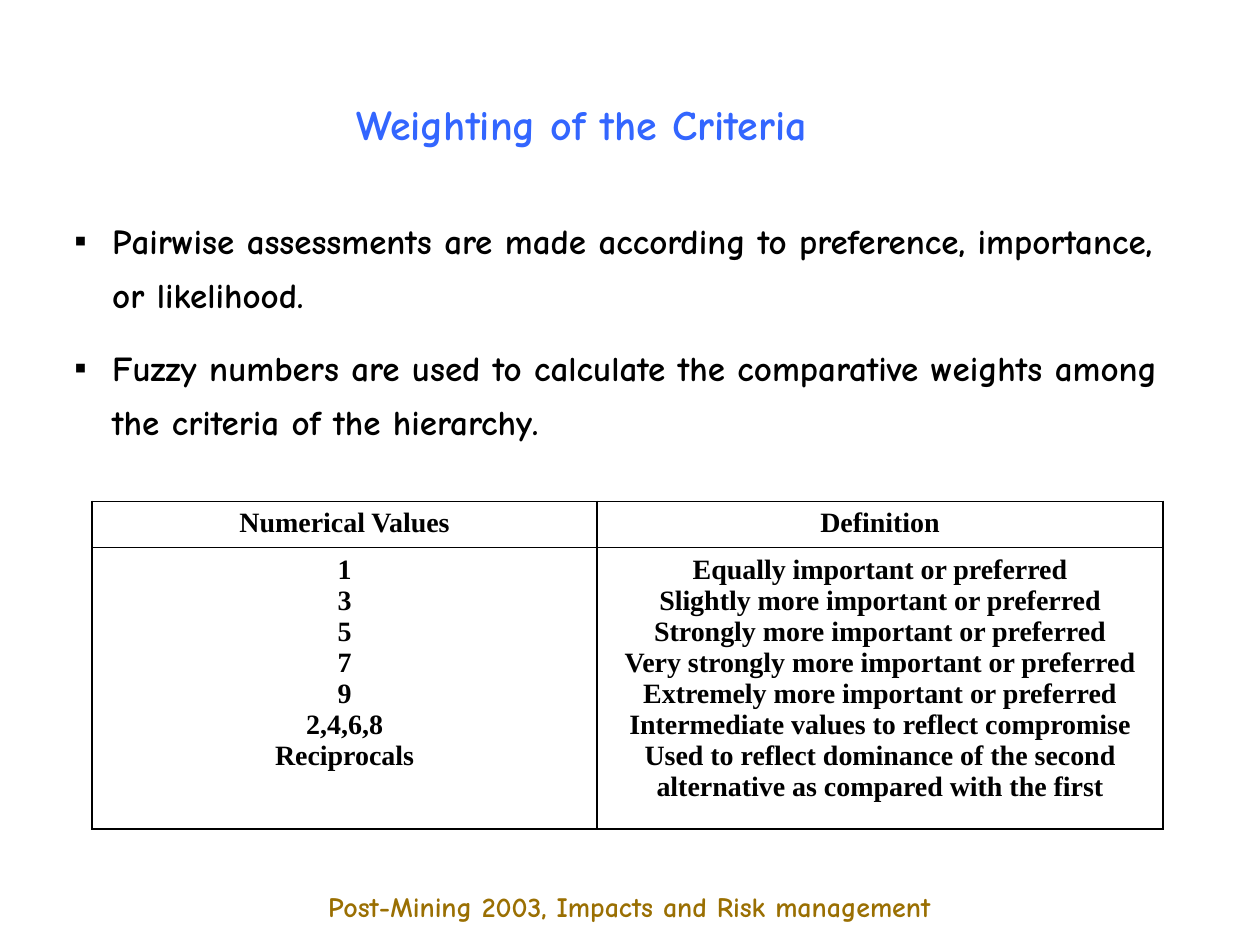
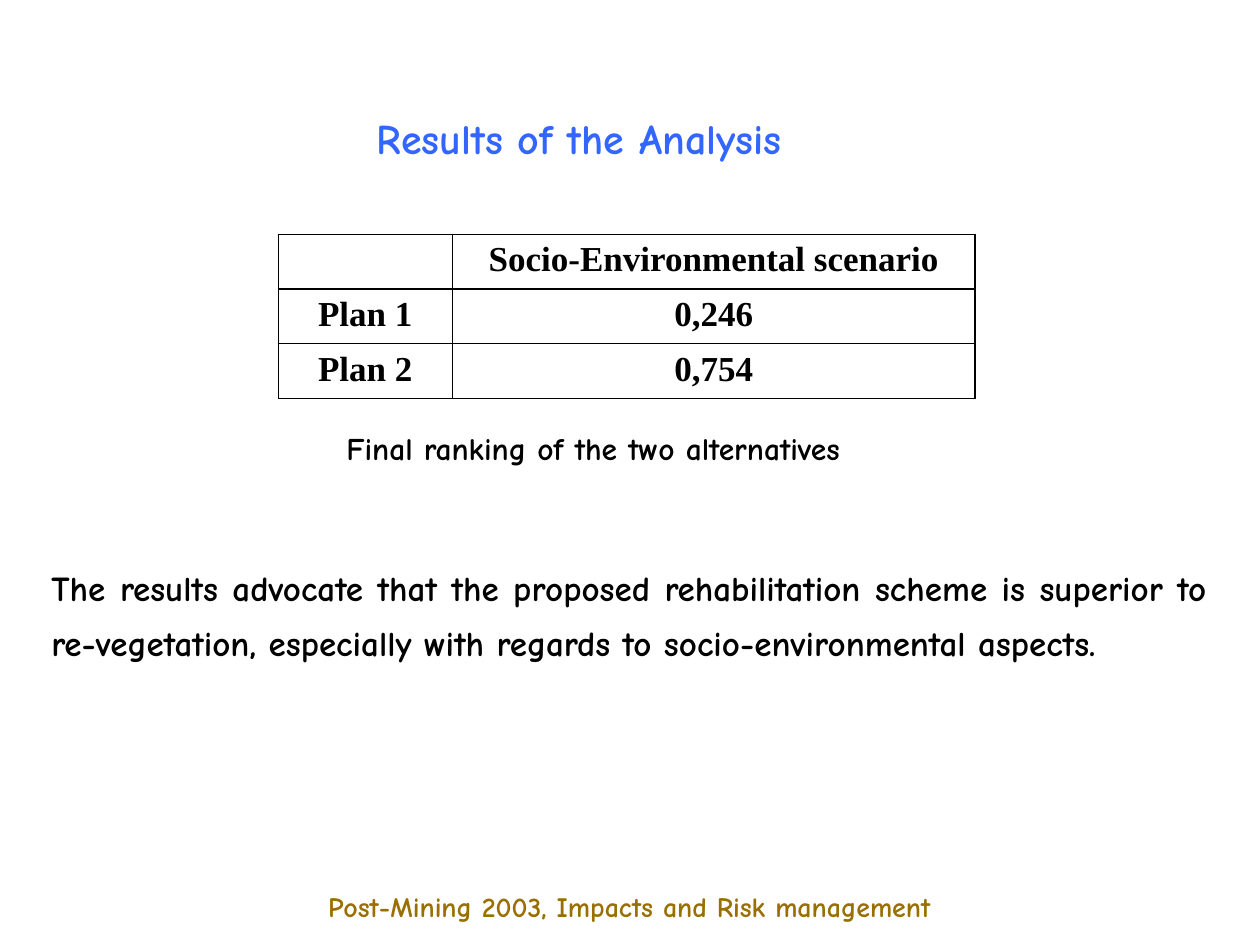
"""Builds two slides on weighting criteria and the results of the analysis."""
import pptx
import pptx.dml.color
import pptx.enum.text
import pptx.oxml
import pptx.oxml.ns
import pptx.util
from pptx.util import Inches

BLUE = pptx.dml.color.RGBColor(0x33, 0x66, 0xFF)
BROWN = pptx.dml.color.RGBColor(0x9A, 0x6F, 0x02)
BLACK = pptx.dml.color.RGBColor(0, 0, 0)
HAND_FONT = "Comic Neue"
TABLE_FONT = "Times New Roman"
LEFT = pptx.enum.text.PP_ALIGN.LEFT
CENTER = pptx.enum.text.PP_ALIGN.CENTER
JUSTIFY = pptx.enum.text.PP_ALIGN.JUSTIFY
TITLE_AND_BODY, TITLE_ONLY = 1, 5
NAMESPACE = pptx.oxml.ns.nsdecls("a")
FOOTER = "Post-Mining 2003, Impacts and Risk management"


def write_text(frame, lines, size, color=BLACK, font=HAND_FONT, align=LEFT,
               line_spacing=1.0, space_before=0, bullet=None):
    frame.word_wrap = True
    for index, line in enumerate(lines):
        paragraph = frame.paragraphs[0] if index == 0 else frame.add_paragraph()
        paragraph.text = line
        if bullet:
            properties = paragraph._p.get_or_add_pPr()
            properties.set("marL", str(Inches(0.3)))
            properties.set("indent", str(-Inches(0.3)))
            properties.append(pptx.oxml.parse_xml(
                f'<a:buChar {NAMESPACE} char="{bullet}"/>'))
        paragraph.alignment = align
        paragraph.line_spacing = line_spacing
        paragraph.space_before = pptx.util.Pt(space_before if index else 0)
        paragraph.font.name = font
        paragraph.font.size = pptx.util.Pt(size)
        paragraph.font.bold = True
        paragraph.font.color.rgb = color


class Deck:
    def __init__(self):
        self.presentation = pptx.Presentation()
        self.presentation.slide_width = Inches(10)
        self.presentation.slide_height = Inches(7.5)
        self.slide = None

    def add_slide(self, layout, title, left, top, width):
        layouts = self.presentation.slide_layouts
        self.slide = self.presentation.slides.add_slide(layouts[layout])
        self.fill_placeholder(self.slide.shapes.title, (left, top, width, 0.5),
                              [title], size=24, color=BLUE)
        self.text((1.47, 7.01, 7.05, 0.37), [FOOTER], size=16, color=BROWN, align=CENTER)

    def fill_placeholder(self, shape, box, lines, **style):
        shape.left, shape.top, shape.width, shape.height = map(Inches, box)
        shape.text_frame.auto_size = pptx.enum.text.MSO_AUTO_SIZE.NONE
        shape.text_frame.vertical_anchor = pptx.enum.text.MSO_ANCHOR.TOP
        write_text(shape.text_frame, lines, **style)

    def bullets(self, box, lines):
        self.fill_placeholder(self.slide.placeholders[1], box, lines, size=20,
                              line_spacing=1.3, space_before=10, bullet="▪")

    def text(self, box, lines, **style):
        shape = self.slide.shapes.add_textbox(*map(Inches, box))
        write_text(shape.text_frame, lines, **style)

    def table(self, left, top, widths, heights, rows, size):
        frame = self.slide.shapes.add_table(
            len(heights), len(widths), Inches(left), Inches(top),
            Inches(sum(widths)), Inches(sum(heights)))
        table = frame.table
        table.first_row = table.horz_banding = False
        for column, width in zip(table.columns, widths):
            column.width = Inches(width)
        for row, height, contents in zip(table.rows, heights, rows):
            row.height = Inches(height)
            for cell, lines in zip(row.cells, contents):
                self.border(cell)
                cell.fill.background()
                write_text(cell.text_frame, lines, size, font=TABLE_FONT, align=CENTER)

    def border(self, cell):
        properties = cell._tc.get_or_add_tcPr()
        for side in "LRTB":
            properties.append(pptx.oxml.parse_xml(
                f'<a:ln{side} {NAMESPACE} w="{pptx.util.Pt(1)}"><a:solidFill>'
                f'<a:srgbClr val="{BLACK}"/></a:solidFill></a:ln{side}>'))


def add_weighting_slide(deck):
    deck.add_slide(TITLE_AND_BODY, "Weighting of the Criteria", 2.73, 0.73, 4.51)
    deck.bullets((0.49, 1.59, 8.98, 2), [
        "Pairwise assessments are made according to preference, importance, or likelihood.",
        "Fuzzy numbers are used to calculate the comparative weights among "
        "the criteria of the hierarchy.",
    ])
    scale = [
        ("1", "Equally important or preferred"),
        ("3", "Slightly more important or preferred"),
        ("5", "Strongly more important or preferred"),
        ("7", "Very strongly more important or preferred"),
        ("9", "Extremely more important or preferred"),
        ("2,4,6,8", "Intermediate values to reflect compromise"),
        ("Reciprocals", "Used to reflect dominance of the second alternative "
                        "as compared with the first"),
    ]
    rows = [[["Numerical Values"], ["Definition"]], list(zip(*scale))]
    deck.table(0.73, 3.98, [4.01, 4.49], [0.35, 2.07], rows, size=16)


def add_results_slide(deck):
    deck.add_slide(TITLE_ONLY, "Results of the Analysis", 2.89, 0.84, 4.17)
    rows = [
        [[], ["Socio-Environmental scenario"]],
        [["Plan 1"], ["0,246"]],
        [["Plan 2"], ["0,754"]],
    ]
    deck.table(2.21, 1.86, [1.38, 4.15], [0.43] * 3, rows, size=20)
    deck.text((2.65, 3.36, 4.66, 0.4), ["Final ranking of the two alternatives"], size=18)
    deck.text((0.31, 4.35, 9.37, 1.4), [
        "The results advocate that the proposed rehabilitation scheme is superior to "
        "re-vegetation, especially with regards to socio-environmental aspects.",
    ], size=20, align=JUSTIFY, line_spacing=1.3)


def main():
    deck = Deck()
    add_weighting_slide(deck)
    add_results_slide(deck)
    deck.presentation.save("out.pptx")


if __name__ == "__main__":
    main()
